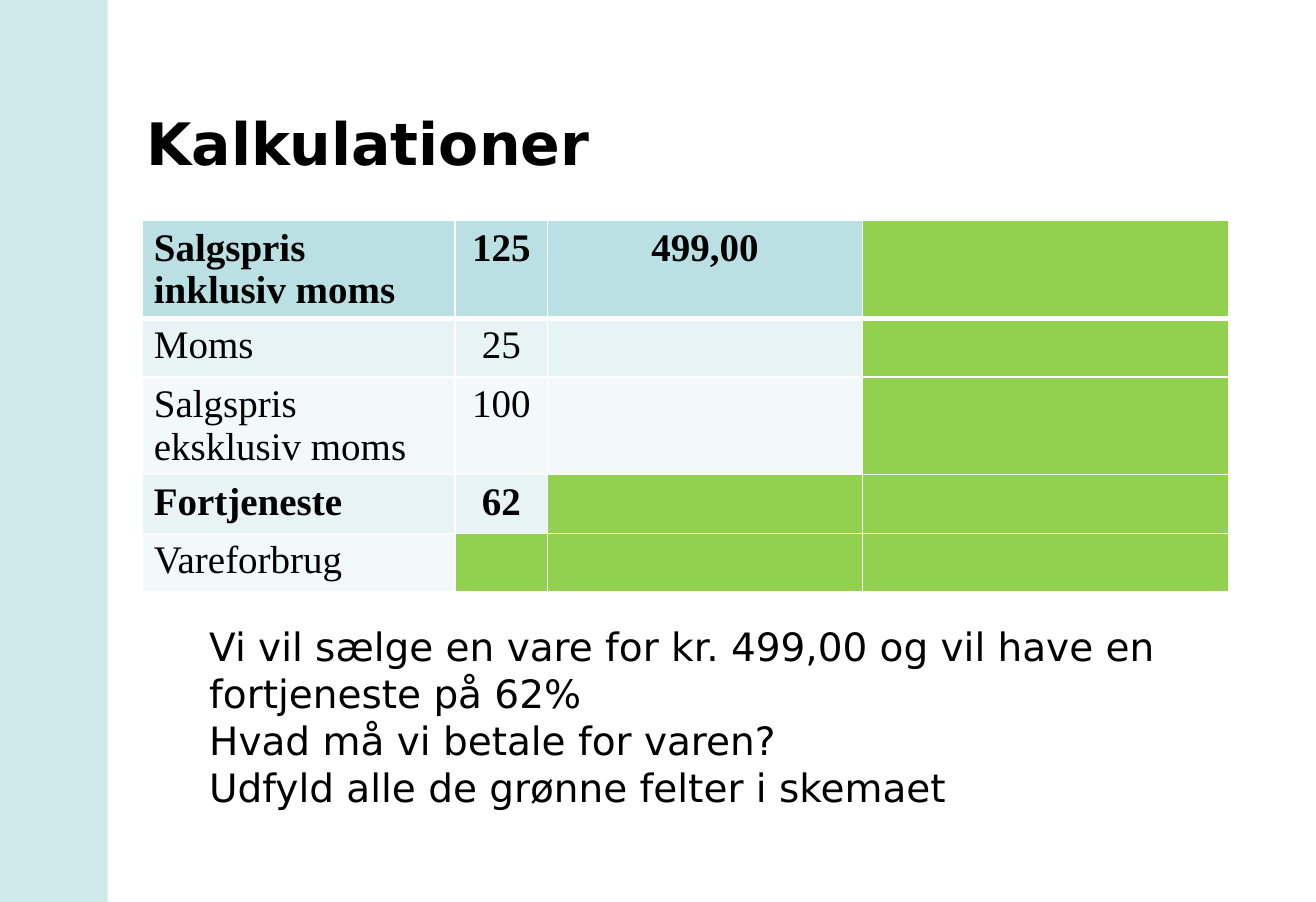
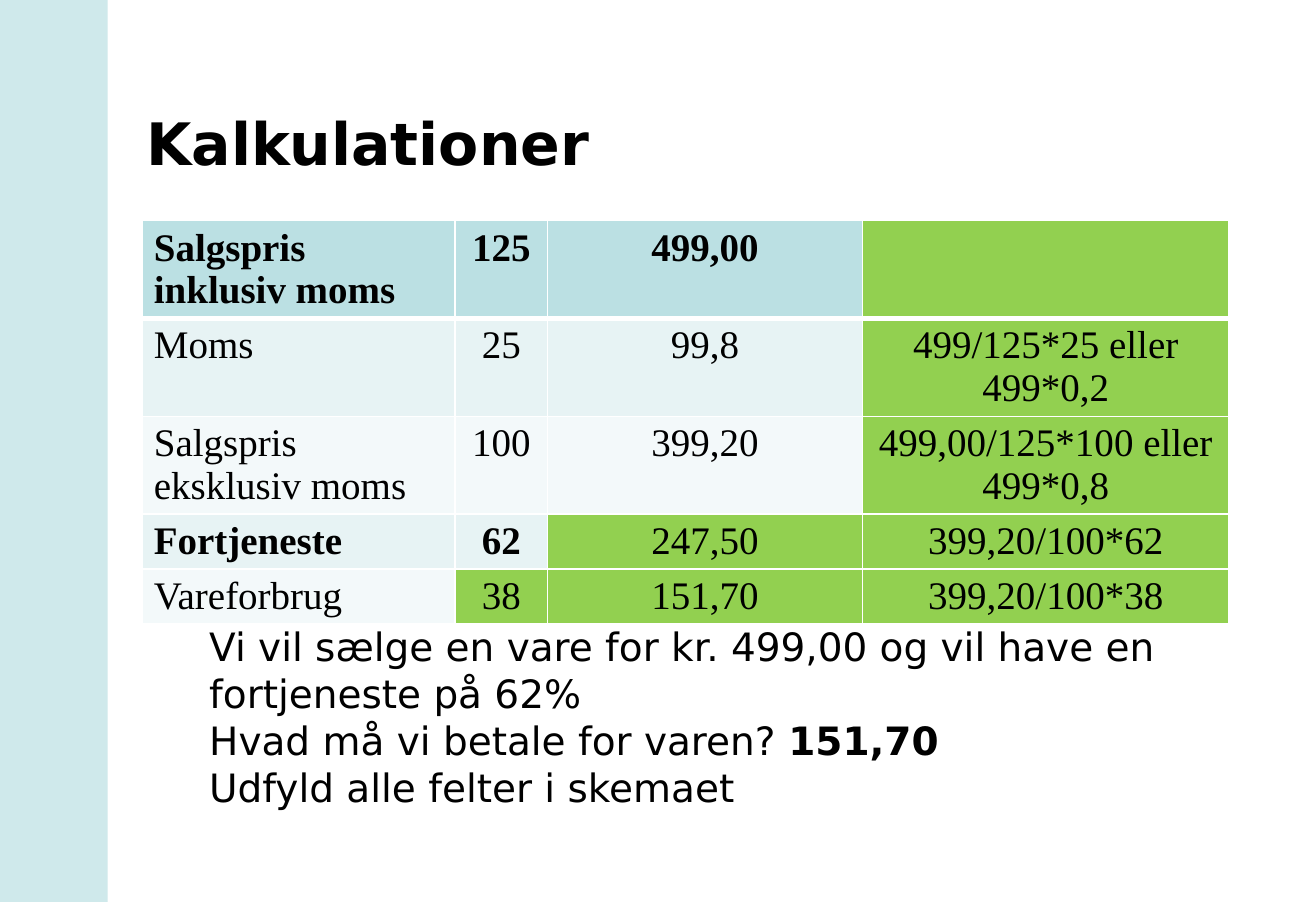
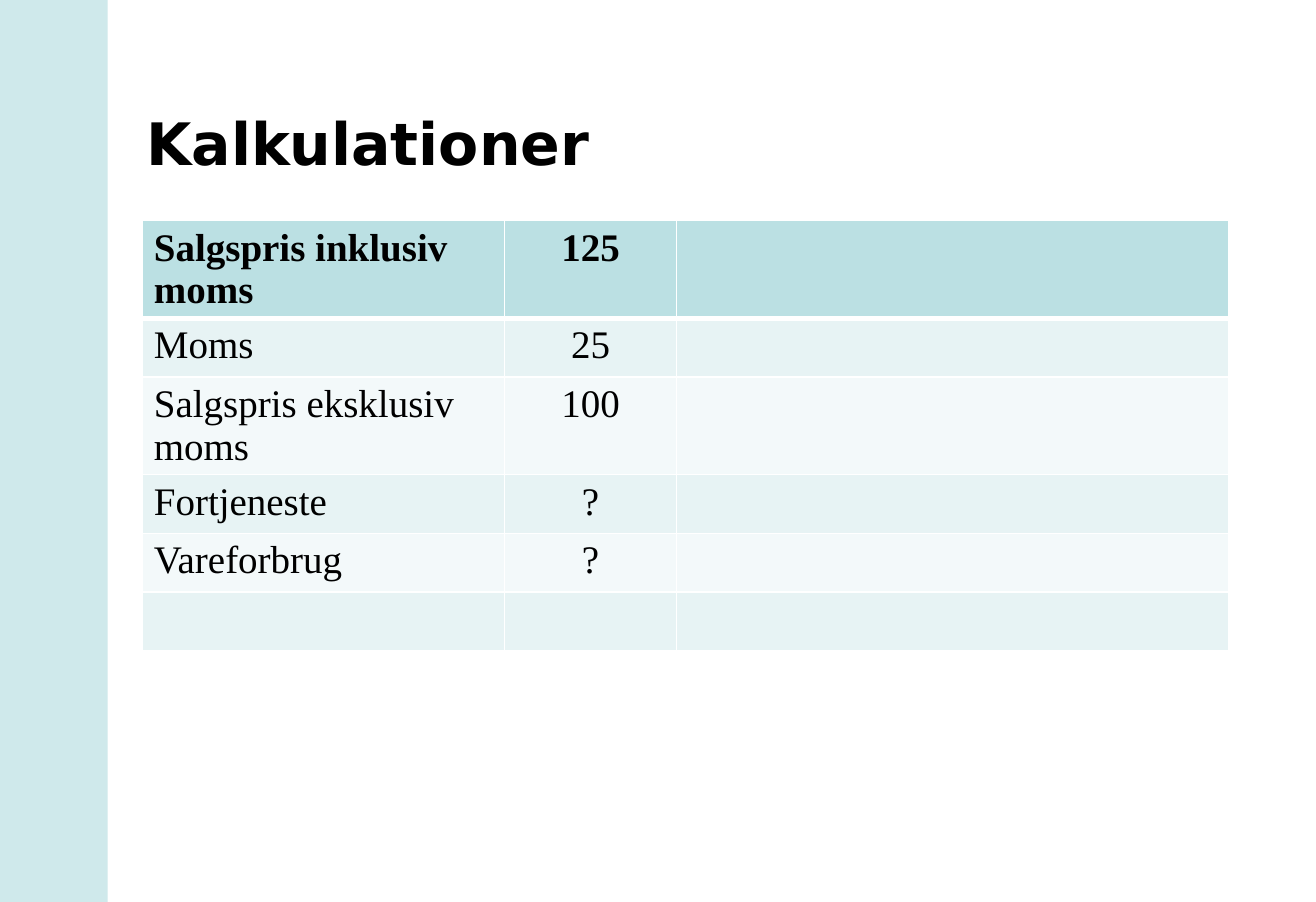
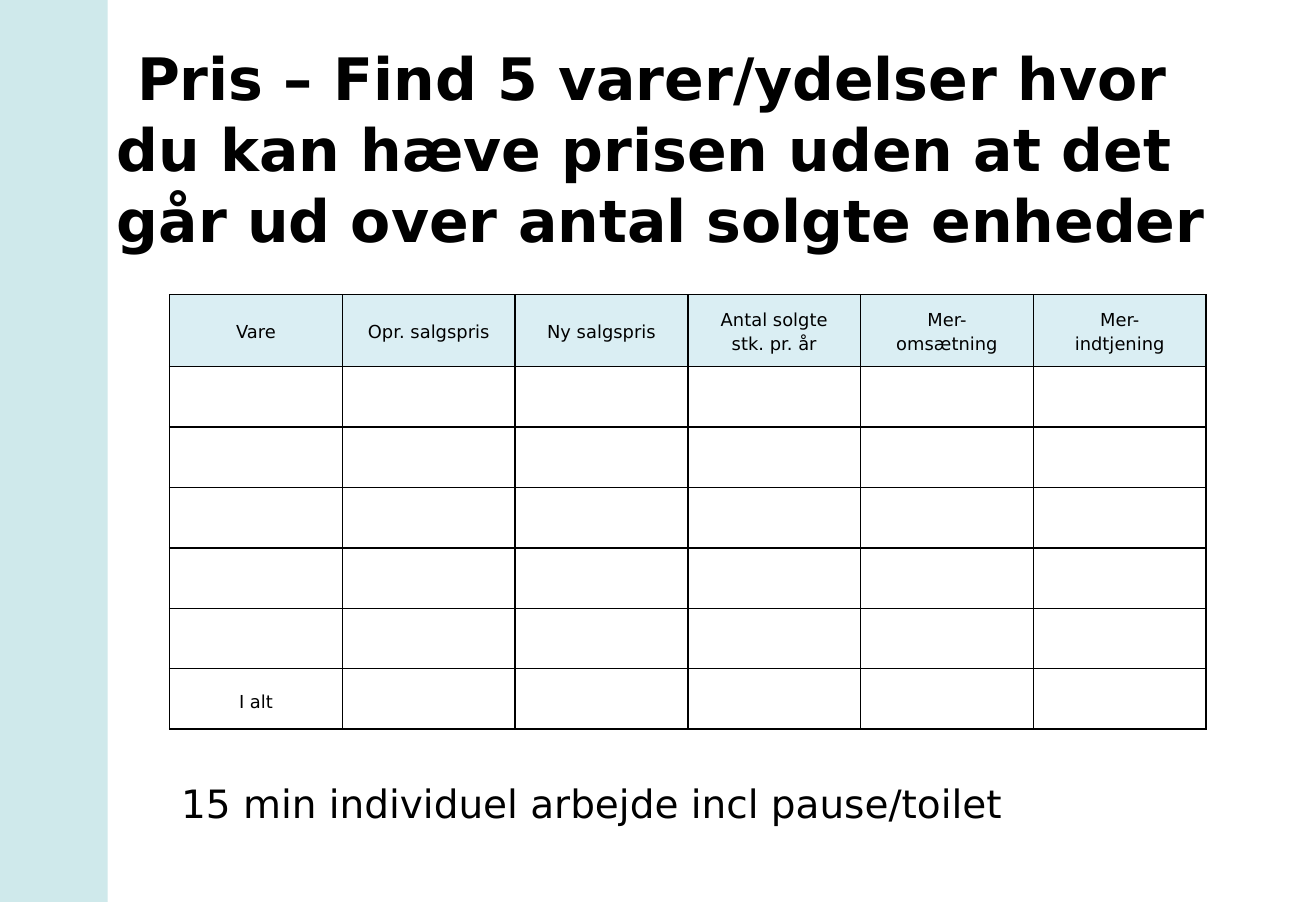
from dataclasses import dataclass

from lxml.etree import SubElement
from pptx import Presentation
from pptx.dml.color import RGBColor
from pptx.enum.shapes import MSO_SHAPE
from pptx.enum.text import MSO_ANCHOR, PP_ALIGN
from pptx.oxml.ns import qn
from pptx.util import Pt

# Shared look
BLACK = RGBColor(0x00, 0x00, 0x00)
WHITE = RGBColor(0xFF, 0xFF, 0xFF)
TEAL = RGBColor(0xBB, 0xE0, 0xE3)
TEAL_LIGHT = RGBColor(0xE7, 0xF3, 0xF4)
TEAL_PALE = RGBColor(0xF3, 0xF9, 0xFA)
GREEN = RGBColor(0x92, 0xD0, 0x50)
HEADER_BLUE = RGBColor(0xDA, 0xEE, 0xF3)
SANS = "DejaVu Sans"
SERIF = "Times New Roman"
SLIDE_W, SLIDE_H = 810, 555.12
BAND_W = 66.24
ONE_LINE, TWO_LINES, TIGHT_LINE = 35, 60.2, 33.8
CELL_LINE = 26.4


@dataclass(frozen=True)
class Box:
    left: float
    top: float
    width: float
    height: float


@dataclass(frozen=True)
class Para:
    text: str
    bold_tail: str = ""


@dataclass(frozen=True)
class PriceRow:
    height: float
    texts: tuple[str, ...]
    green_from: int = 9
    bold: bool = False


TITLE_BOX = Box(70.5, 62.2, 700, 96)
HIGH_TITLE_BOX = Box(64.8, 22.4, 689.8, 140)
QUESTION_BOX = Box(121.7, 379.4, 641, 124)
NOTE_BOX = Box(104.4, 475.9, 529, 36)


def style(font, name: str, size: float, bold: bool = False) -> None:
    font.name, font.size, font.bold = name, Pt(size), bold
    font.color.rgb = BLACK


def add_text(s, box: Box, paras: list[Para], size: float, line: float,
             bold: bool = False, indent: float = 0, wrap: bool = True) -> None:
    tb = s.shapes.add_textbox(Pt(box.left), Pt(box.top), Pt(box.width), Pt(box.height))
    tf = tb.text_frame
    tf.word_wrap = wrap
    for i, para in enumerate(paras):
        p = tf.paragraphs[0] if i == 0 else tf.add_paragraph()
        p.line_spacing = Pt(line)
        if indent:
            p._p.get_or_add_pPr().set("indent", str(Pt(indent)))
        style(p.font, SANS, size, bold)
        p.add_run().text = para.text
        if para.bold_tail:
            r = p.add_run()
            r.text = para.bold_tail
            r.font.bold = True


def add_body(s, box: Box, paras: list[Para], wrap: bool = True) -> None:
    add_text(s, box, paras, 24, 29, wrap=wrap)


def new_slide(prs, title: str, title_box: Box = TITLE_BOX):
    s = prs.slides.add_slide(prs.slide_layouts[6])
    # Translucent band at the left edge
    band = s.shapes.add_shape(MSO_SHAPE.RECTANGLE, 0, 0, Pt(BAND_W), Pt(SLIDE_H))
    band.shadow.inherit = False
    band.fill.solid()
    band.fill.fore_color.rgb = TEAL
    color = band._element.spPr.find(f"{qn('a:solidFill')}/{qn('a:srgbClr')}")
    SubElement(color, qn("a:alpha"), val="70000")
    band.line.fill.background()
    add_text(s, title_box, [Para(title)], 36, 43.4, bold=True, indent=12.5)
    return s


def set_borders(cell, color: RGBColor, top: float = 1, bottom: float = 1) -> None:
    tcPr = cell._tc.get_or_add_tcPr()
    for side, width in (("L", 1), ("R", 1), ("T", top), ("B", bottom)):
        ln = SubElement(tcPr, qn(f"a:ln{side}"), w=str(Pt(width)))
        fill = SubElement(ln, qn("a:solidFill"))
        SubElement(fill, qn("a:srgbClr"), val=str(color))


def new_table(s, left: float, top: float, cols: list[float], rows: list[float]):
    frame = s.shapes.add_table(len(rows), len(cols), Pt(left), Pt(top),
                               Pt(sum(cols)), Pt(sum(rows)))
    table = frame.table
    table.first_row = table.horz_banding = False
    for column, width in zip(table.columns, cols):
        column.width = Pt(width)
    for row, height in zip(table.rows, rows):
        row.height = Pt(height)
    return table


def fill_cell(cell, color: RGBColor) -> None:
    cell.fill.solid()
    cell.fill.fore_color.rgb = color


def add_price_table(s, cols: list[float], rows: list[PriceRow]) -> None:
    table = new_table(s, 87.5, 135.8, cols, [row.height for row in rows])
    for i, row in enumerate(rows):
        base = TEAL if i == 0 else TEAL_LIGHT if i % 2 else TEAL_PALE
        for j, text in enumerate(row.texts):
            cell = table.cell(i, j)
            set_borders(cell, WHITE, top=3 if i == 1 else 1, bottom=3 if i == 0 else 1)
            green = j >= row.green_from
            fill_cell(cell, GREEN if green else base)
            cell.text = text
            for p in cell.text_frame.paragraphs:
                p.alignment = PP_ALIGN.CENTER if j else PP_ALIGN.LEFT
                # A fixed line height keeps the rows from growing
                p.line_spacing = Pt(CELL_LINE)
                style(p.font, SERIF, 24, row.bold and not green)


def add_worksheet(s) -> None:
    header = ("Vare", "Opr. salgspris", "Ny salgspris", "Antal solgte\nstk. pr. år",
              "Mer-\nomsætning", "Mer-\nindtjening")
    n_rows = 7
    table = new_table(s, 104.4, 181.4, [106.33] * len(header),
                      [44.2] + [37.2] * (n_rows - 1))
    texts = {(0, j): text for j, text in enumerate(header)}
    texts[n_rows - 1, 0] = "I alt"
    for i in range(n_rows):
        for j in range(len(header)):
            cell = table.cell(i, j)
            set_borders(cell, BLACK)
            if i == 0:
                fill_cell(cell, HEADER_BLUE)
            else:
                cell.fill.background()
            if (i, j) not in texts:
                continue
            cell.text = texts[i, j]
            cell.vertical_anchor = MSO_ANCHOR.MIDDLE
            cell.margin_left = cell.margin_right = Pt(5.4)
            cell.margin_top = cell.margin_bottom = 0
            for p in cell.text_frame.paragraphs:
                p.alignment = PP_ALIGN.CENTER
                p.line_spacing = 1.15 if i == 0 else Pt(17)
                style(p.font, SANS, 11)


def main() -> None:
    prs = Presentation()
    prs.slide_width, prs.slide_height = Pt(SLIDE_W), Pt(SLIDE_H)
    title = "Kalkulationer"
    wide_cols = [192.6, 56.9, 194, 225.4]
    task = Para("Vi vil sælge en vare for kr. 499,00 og vil have en fortjeneste på 62%")
    incl, excl = "Salgspris inklusiv moms", "Salgspris eksklusiv moms"

    # Exercise
    s = new_slide(prs, title)
    add_price_table(s, wide_cols, [
        PriceRow(TWO_LINES, (incl, "125", "499,00", ""), 3, True),
        PriceRow(ONE_LINE, ("Moms", "25", "", ""), 3),
        PriceRow(TWO_LINES, (excl, "100", "", ""), 3),
        PriceRow(ONE_LINE, ("Fortjeneste", "62", "", ""), 2, True),
        PriceRow(ONE_LINE, ("Vareforbrug", "", "", ""), 1),
    ])
    add_body(s, QUESTION_BOX, [task, Para("Hvad må vi betale for varen?"),
                               Para("Udfyld alle de grønne felter i skemaet")])

    # Solution
    s = new_slide(prs, title)
    add_price_table(s, wide_cols, [
        PriceRow(TWO_LINES, (incl, "125", "499,00", ""), 3, True),
        PriceRow(TWO_LINES, ("Moms", "25", "99,8", "499/125*25 eller\n499*0,2"), 3),
        PriceRow(TWO_LINES, (excl, "100", "399,20", "499,00/125*100 eller\n499*0,8"), 3),
        PriceRow(TIGHT_LINE, ("Fortjeneste", "62", "247,50", "399,20/100*62"), 2, True),
        PriceRow(TIGHT_LINE, ("Vareforbrug", "38", "151,70", "399,20/100*38"), 1),
    ])
    add_body(s, QUESTION_BOX, [task, Para("Hvad må vi betale for varen? ", "151,70"),
                               Para("Udfyld alle felter i skemaet")])

    # Open form
    s = new_slide(prs, title)
    add_price_table(s, [223, 106, 339.9], [
        PriceRow(TWO_LINES, (incl, "125", ""), bold=True),
        PriceRow(ONE_LINE, ("Moms", "25", "")),
        PriceRow(TWO_LINES, (excl, "100", "")),
        PriceRow(ONE_LINE, ("Fortjeneste", "?", "")),
        PriceRow(ONE_LINE, ("Vareforbrug", "?", "")),
        PriceRow(ONE_LINE, ("", "", "")),
    ])

    # Price worksheet
    s = new_slide(prs, "Pris – Find 5 varer/ydelser hvor du kan hæve prisen uden at "
                       "det går ud over antal solgte enheder", HIGH_TITLE_BOX)
    add_worksheet(s)
    add_body(s, NOTE_BOX, [Para("15 min individuel arbejde incl pause/toilet")], wrap=False)

    prs.save("out.pptx")


if __name__ == "__main__":
    main()
